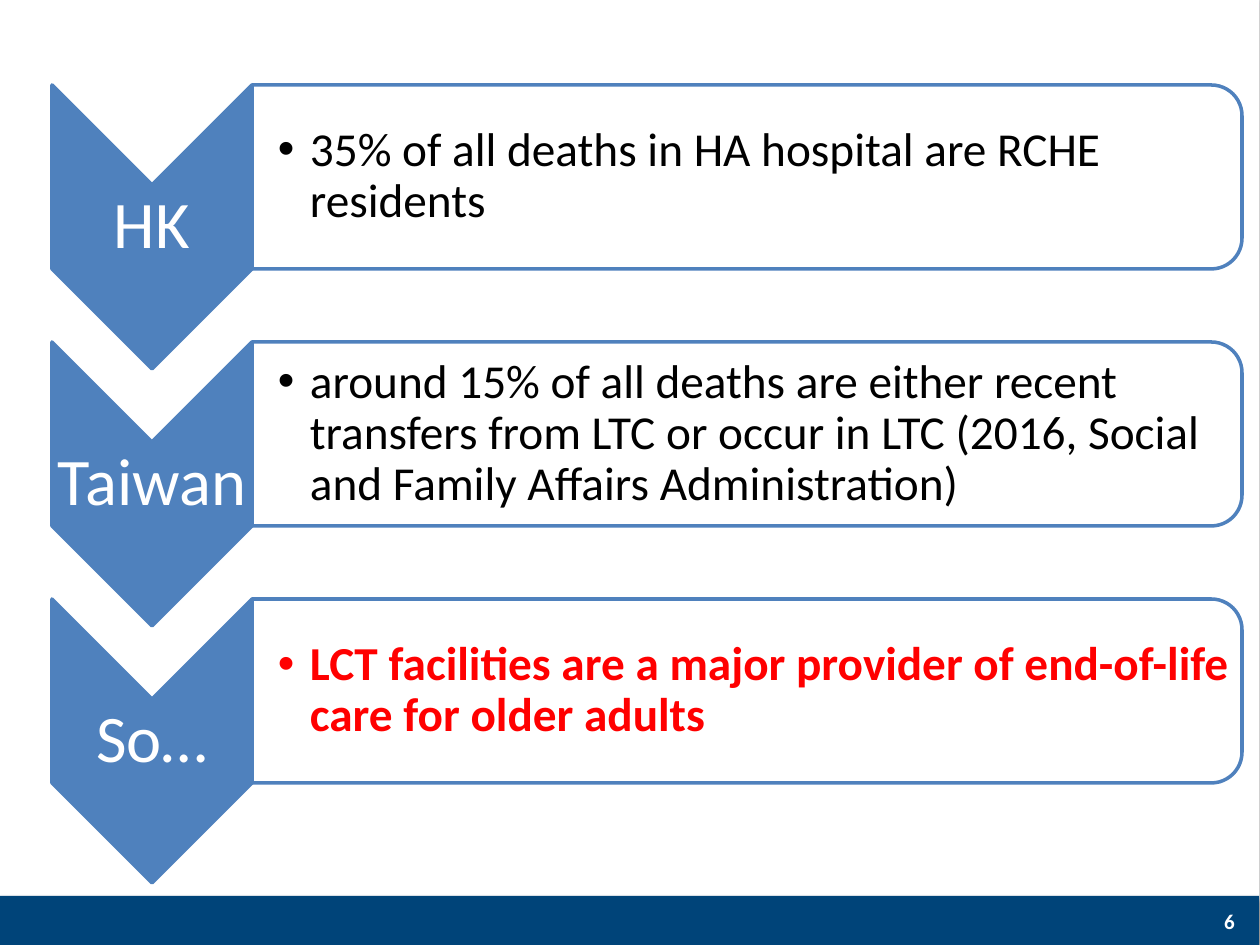
from lxml.etree import SubElement
from pptx import Presentation
from pptx.dml.color import RGBColor
from pptx.enum.shapes import MSO_SHAPE
from pptx.enum.text import MSO_ANCHOR, PP_ALIGN
from pptx.oxml.ns import qn
from pptx.util import Emu, Pt

WHITE = RGBColor(0xFF, 0xFF, 0xFF)
BLACK = RGBColor(0, 0, 0)
RED = RGBColor(0xFF, 0, 0)
BLUE = RGBColor(0x4F, 0x81, 0xBD)
NAVY = RGBColor(0x00, 0x44, 0x79)


def px(n):
    return Emu(round(n * 914400 / 126))


class Deck:
    font = "Calibri"

    def __init__(self, width, height):
        self.prs = Presentation()
        self.prs.slide_width, self.prs.slide_height = px(width), px(height)
        self.s = self.prs.slides.add_slide(self.prs.slide_layouts[6])

    def shape(self, kind, x, y, w, h, fill, line=None, rotation=0):
        sp = self.s.shapes.add_shape(kind, px(x), px(y), px(w), px(h))
        sp.shadow.inherit = False
        sp.rotation = rotation
        sp.fill.solid()
        sp.fill.fore_color.rgb = fill
        if line is None:
            sp.line.fill.background()
        else:
            sp.line.color.rgb = line
            sp.line.width = Pt(2)
        return sp

    def turned(self, kind, x, y, w, h, fill):
        left, top = x + (w - h) / 2, y + (h - w) / 2
        return self.shape(kind, left, top, h, w, fill, BLUE, 90)

    def panel(self, x, y, w, h, fill):
        sp = self.shape(MSO_SHAPE.RECTANGLE, x, y, w, h, fill)
        effects = sp._element.spPr.find(qn("a:effectLst"))
        shadow = SubElement(effects, qn("a:outerShdw"), blurRad=str(Pt(3.1)),
                            dist=str(Pt(1.8)), dir="5400000", rotWithShape="0")
        color = SubElement(shadow, qn("a:srgbClr"), val=str(BLACK))
        SubElement(color, qn("a:alpha"), val="35000")

    def text(self, x, y, w, h, words, size, color, bold=False,
             align=PP_ALIGN.CENTER, spacing=0.9, left=4, margin=4):
        sp = self.s.shapes.add_textbox(px(x), px(y), px(w), px(h))
        tf = sp.text_frame
        tf.word_wrap = True
        tf.vertical_anchor = MSO_ANCHOR.MIDDLE
        tf.margin_left = px(left)
        tf.margin_top = tf.margin_right = tf.margin_bottom = px(margin)
        p = tf.paragraphs[0]
        p.alignment = align
        p.line_spacing = spacing
        r = p.add_run()
        r.text = words
        r.font.name = self.font
        r.font.size = Pt(size)
        r.font.bold = bold
        r.font.color.rgb = color
        return p

    def bullet(self, x, y, w, h, words, color, bold):
        p = self.text(x, y, w, h, words, 27, color, bold,
                      PP_ALIGN.LEFT, left=26, margin=2)
        pPr = p._p.get_or_add_pPr()
        pPr.set("marL", str(px(32)))
        pPr.set("indent", str(-px(32)))
        SubElement(pPr, qn("a:buFont"), typeface="Arial")
        SubElement(pPr, qn("a:buChar"), char="•")

    def row(self, y, label, words, color, bold):
        self.turned(MSO_SHAPE.CHEVRON, 52, y, 200, 284, BLUE)
        self.text(52, y + 99, 200, 86, label, 38, WHITE)
        self.turned(MSO_SHAPE.ROUND_2_SAME_RECTANGLE, 252, y, 990, 184, WHITE)
        self.bullet(252, y + 9, 981, 166, words, color, bold)


ROWS = [
    ("HK", "35% of all deaths in HA hospital are RCHE residents", BLACK, False),
    ("Taiwan", "around 15% of all deaths are either recent transfers from LTC "
     "or occur in LTC (2016, Social and Family Affairs Administration)",
     BLACK, False),
    ("So…", "LCT facilities are a major provider of end-of-life care "
     "for older adults", RED, True),
]


def main():
    deck = Deck(1260, 945)
    deck.panel(-1, -4, 1260, 949, WHITE)
    deck.panel(-1, 896, 1260, 49, NAVY)
    for i, row in enumerate(ROWS):
        deck.row(85 + 257 * i, *row)
    deck.text(1194, 896, 64, 50, "6", 12, WHITE, True, spacing=1.0,
              left=13, margin=6)
    deck.prs.save("out.pptx")


if __name__ == "__main__":
    main()
